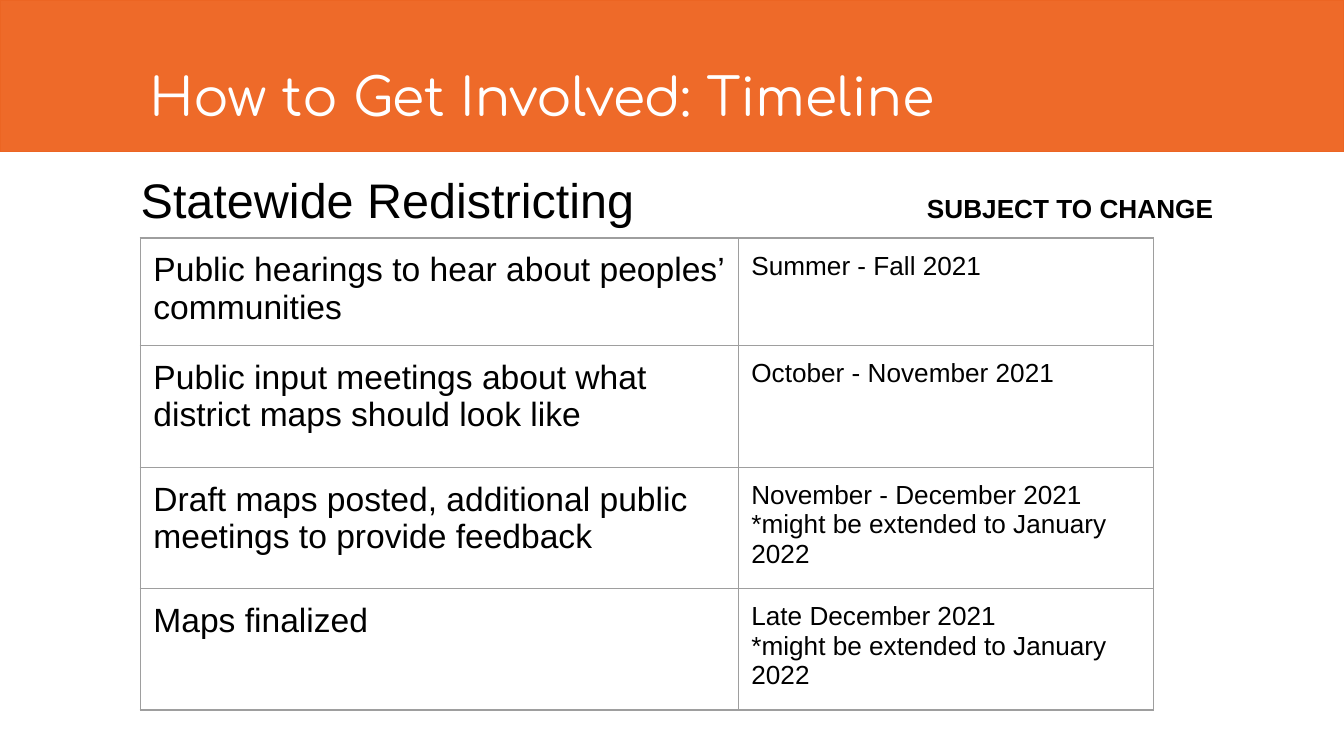
from dataclasses import dataclass

from lxml import etree
from pptx import Presentation
from pptx.dml.color import RGBColor
from pptx.enum.shapes import MSO_SHAPE
from pptx.enum.text import MSO_ANCHOR, MSO_AUTO_SIZE, PP_ALIGN
from pptx.oxml.ns import qn
from pptx.slide import Slide
from pptx.table import _Cell
from pptx.text.text import TextFrame
from pptx.util import Cm, Pt

RECT = MSO_SHAPE.RECTANGLE
TOP, BOTTOM = MSO_ANCHOR.TOP, MSO_ANCHOR.BOTTOM
LEFT = PP_ALIGN.LEFT
FIXED = MSO_AUTO_SIZE.NONE

COLORS = {
    "band": "EE6A29",
    "edge": "EC6523",
    "title": "FFFFFF",
    "text": "000000",
    "grid": "9E9E9E",
}
PAD = Cm(0.25)
COLS = (11.3, 7.85)
ROWS = (2.03, 2.31, 2.29, 2.29)


@dataclass(frozen=True)
class Style:
    size: int
    font: str = "Arial"
    color: str = "text"
    bold: bool = False


@dataclass(frozen=True)
class Label:
    text: str
    box: tuple[float, float, float, float]
    style: Style


@dataclass(frozen=True)
class Step:
    task: str
    dates: tuple[str, ...]


TITLE = Style(28, "Comfortaa", "title")
TASK = Style(18)
DATE = Style(14)
DELAY = "*might be extended to January 2022"

LABELS = (
    Label("Statewide Redistricting", (2.41, 2.97, 14, 1.63), Style(26)),
    Label("SUBJECT TO CHANGE", (17.27, 3.38, 6.1, 1.12), Style(14, bold=True)),
)
STEPS = (
    Step("Public hearings to hear about peoples’ communities",
         ("Summer - Fall 2021",)),
    Step("Public input meetings about what district maps should look like",
         ("October - November 2021",)),
    Step("Draft maps posted, additional public meetings to provide feedback",
         ("November - December 2021", DELAY)),
    Step("Maps finalized", ("Late December 2021", DELAY)),
)


def rgb(name: str) -> RGBColor:
    return RGBColor.from_string(COLORS[name])


def write(frame: TextFrame, lines: tuple[str, ...], style: Style) -> None:
    for i, line in enumerate(lines):
        para = frame.add_paragraph() if i else frame.paragraphs[0]
        para.alignment = LEFT
        run = para.add_run()
        run.text = line
        font = run.font
        font.size, font.name, font.bold = Pt(style.size), style.font, style.bold
        font.color.rgb = rgb(style.color)


def add_head(slide: Slide, width: int) -> None:
    """Place the title over a full-width band."""
    title = slide.shapes.title
    band = slide.shapes.add_shape(RECT, 0, 0, width, Cm(2.86))
    band.shadow.inherit = False
    band.fill.solid()
    band.fill.fore_color.rgb = rgb("band")
    band.line.color.rgb = rgb("edge")
    band.line.width = Pt(0.75)
    title.element.addprevious(band.element)

    title.left, title.top = Cm(2.57), Cm(0.51)
    title.width, title.height = Cm(20.93), Cm(2.01)
    frame = title.text_frame
    frame.auto_size = FIXED
    frame.vertical_anchor = BOTTOM
    write(frame, ("How to Get Involved: Timeline",), TITLE)


def add_label(slide: Slide, label: Label) -> None:
    frame = slide.shapes.add_textbox(*map(Cm, label.box)).text_frame
    frame.word_wrap = True
    frame.margin_left = frame.margin_right = PAD
    frame.margin_top = frame.margin_bottom = PAD
    write(frame, (label.text,), label.style)


def add_grid(cell: _Cell) -> None:
    """Draw a thin border on all four sides of the cell."""
    props = cell._tc.get_or_add_tcPr()
    for side in ("lnL", "lnR", "lnT", "lnB"):
        line = etree.SubElement(props, qn(f"a:{side}"), w=str(Pt(0.75)))
        fill = etree.SubElement(line, qn("a:solidFill"))
        etree.SubElement(fill, qn("a:srgbClr"), val=COLORS["grid"])


def fill_cell(cell: _Cell, lines: tuple[str, ...], style: Style) -> None:
    cell.margin_left = cell.margin_right = PAD
    cell.margin_top = cell.margin_bottom = PAD
    cell.vertical_anchor = TOP
    add_grid(cell)
    cell.fill.background()
    write(cell.text_frame, lines, style)


def add_steps(slide: Slide) -> None:
    table = slide.shapes.add_table(
        len(STEPS), len(COLS), Cm(2.65), Cm(4.5), Cm(sum(COLS)), Cm(sum(ROWS))
    ).table
    table.first_row = table.horz_banding = False
    for col, width in zip(table.columns, COLS):
        col.width = Cm(width)
    for i, (step, height) in enumerate(zip(STEPS, ROWS)):
        table.rows[i].height = Cm(height)
        fill_cell(table.cell(i, 0), (step.task,), TASK)
        fill_cell(table.cell(i, 1), step.dates, DATE)


def main() -> None:
    deck = Presentation()
    deck.slide_width, deck.slide_height = Cm(25.4), Cm(14.29)
    slide = deck.slides.add_slide(deck.slide_layouts.get_by_name("Title Only"))
    add_head(slide, deck.slide_width)
    for label in LABELS:
        add_label(slide, label)
    add_steps(slide)
    deck.save("out.pptx")


if __name__ == "__main__":
    main()
